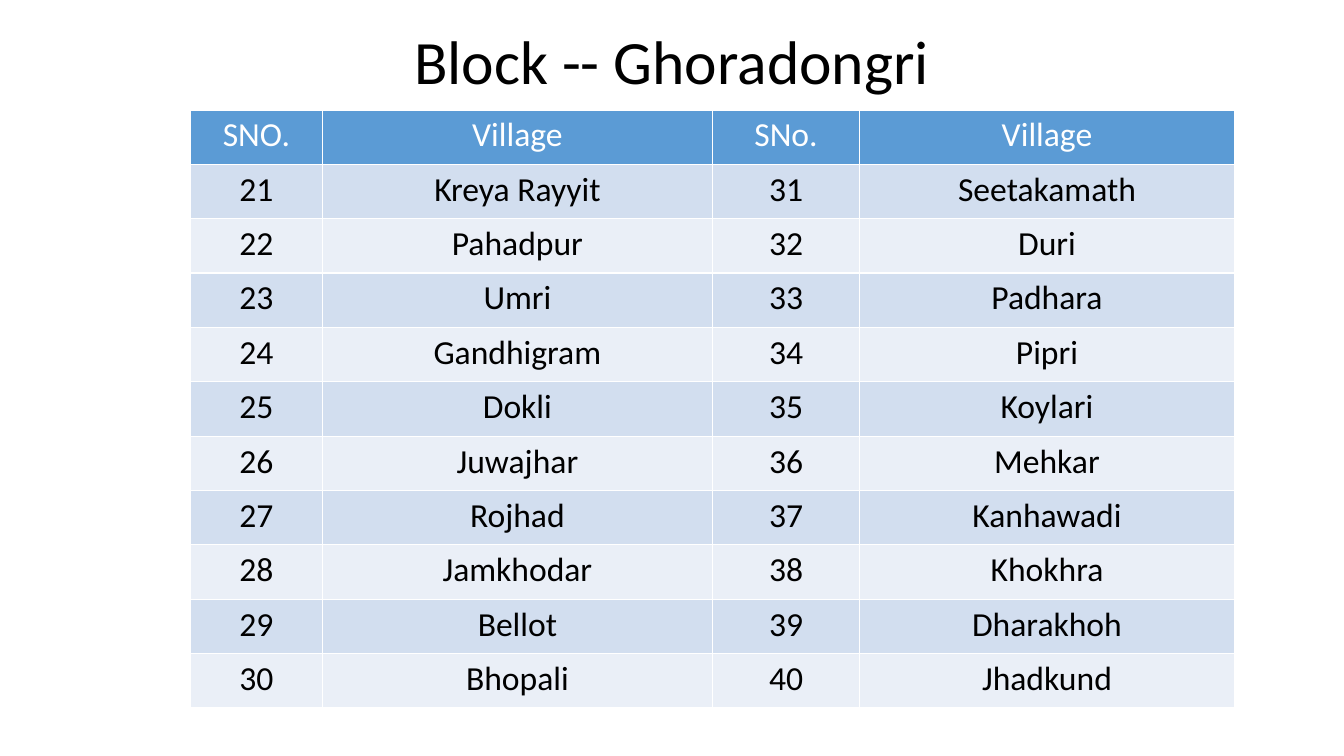
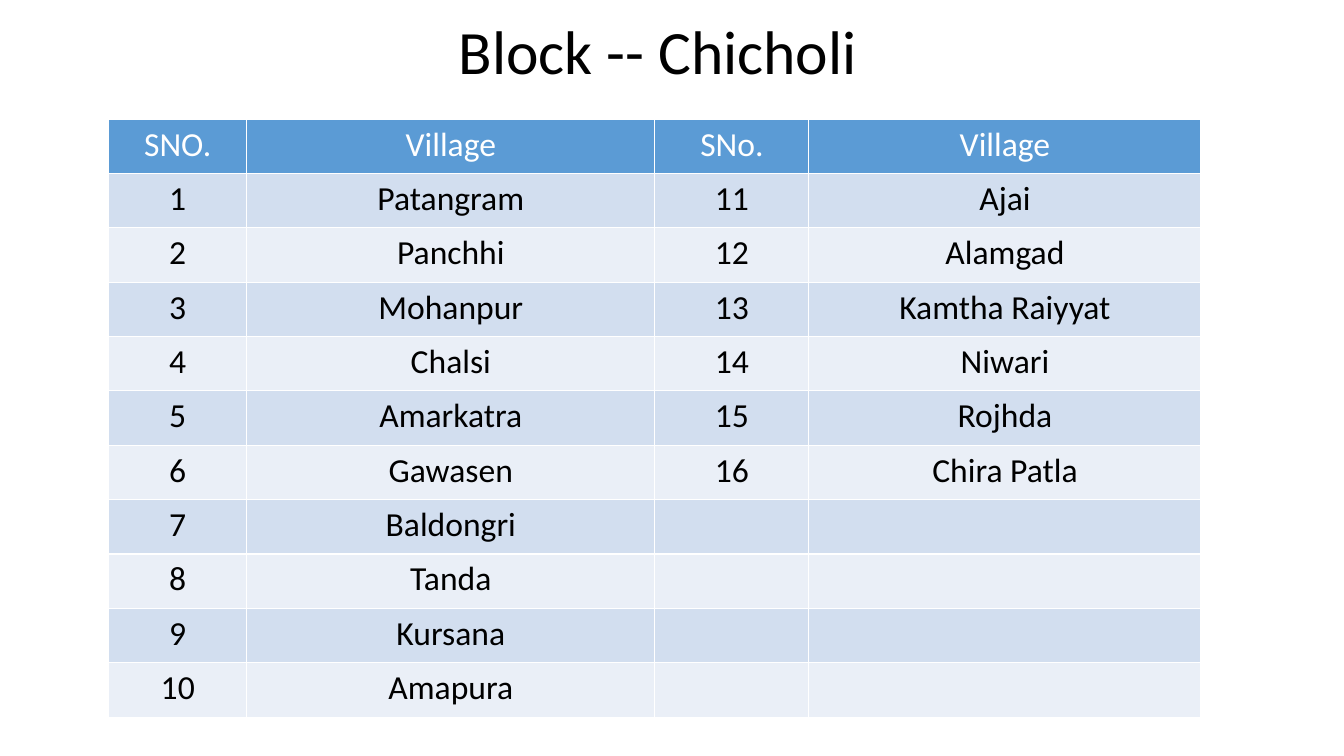
from itertools import zip_longest

from pptx import Presentation
from pptx.dml.color import RGBColor
from pptx.enum.text import MSO_ANCHOR, MSO_AUTO_SIZE, PP_ALIGN
from pptx.util import Cm, Pt

BLACK = RGBColor(0x00, 0x00, 0x00)
WHITE = RGBColor(0xFF, 0xFF, 0xFF)
HEADER_BLUE = RGBColor(0x5B, 0x9B, 0xD5)
BANDS = [RGBColor(0xEA, 0xEF, 0xF7), RGBColor(0xD2, 0xDE, 0xEF)]

FONT = "Calibri"
HEADINGS = ["SNO.", "Village", "SNo.", "Village"]
COL_PERCENT = [12.64, 37.36, 14.1, 35.9]
ROWS_PER_COLUMN = 10
ROW_HEIGHT = 1.37

# Title and table boxes are left, top, width and (title only) height in cm.
BLOCKS = [
    {
        "name": "Ghoradongri",
        "title_box": (0, 0, 33.87, 2.59),
        "table_box": (4.8, 2.77, 26.31),
        "first": 21,
        "villages": [
            "Kreya Rayyit", "Pahadpur", "Umri", "Gandhigram", "Dokli",
            "Juwajhar", "Rojhad", "Jamkhodar", "Bellot", "Bhopali",
            "Seetakamath", "Duri", "Padhara", "Pipri", "Koylari",
            "Mehkar", "Kanhawadi", "Khokhra", "Dharakhoh", "Jhadkund",
        ],
    },
    {
        "name": "Chicholi",
        "title_box": (0, 0.46, 33.17, 1.88),
        "table_box": (2.74, 3, 27.53),
        "first": 1,
        "villages": [
            "Patangram", "Panchhi", "Mohanpur", "Chalsi", "Amarkatra",
            "Gawasen", "Baldongri", "Tanda", "Kursana", "Amapura",
            "Ajai", "Alamgad", "Kamtha Raiyyat", "Niwari", "Rojhda",
            "Chira Patla",
        ],
    },
]


def write(tf, text, size=24, color=BLACK, line_spacing=None):
    p = tf.paragraphs[0]
    p.alignment = PP_ALIGN.CENTER
    p.line_spacing = line_spacing
    r = p.add_run()
    r.text = text
    r.font.name = FONT
    r.font.size = Pt(size)
    r.font.bold = False
    r.font.color.rgb = color


prs = Presentation()
prs.slide_width, prs.slide_height = Cm(33.87), Cm(19.05)
title_only = prs.slide_layouts[5]

for block in BLOCKS:
    s = prs.slides.add_slide(title_only)

    title = s.shapes.title
    title.left, title.top, title.width, title.height = map(Cm, block["title_box"])
    tf = title.text_frame
    tf.auto_size = MSO_AUTO_SIZE.NONE
    tf.vertical_anchor = MSO_ANCHOR.BOTTOM
    write(tf, f"Block -- {block['name']}", size=44, line_spacing=0.9)

    numbered = [(str(n), village)
                for n, village in enumerate(block["villages"], block["first"])]
    pairs = zip_longest(numbered[:ROWS_PER_COLUMN], numbered[ROWS_PER_COLUMN:],
                        fillvalue=("", ""))
    rows = [HEADINGS] + [left + right for left, right in pairs]

    # The default table style draws the white grid lines.
    left, top, width = block["table_box"]
    table = s.shapes.add_table(len(rows), len(HEADINGS), Cm(left), Cm(top),
                               Cm(width), Cm(ROW_HEIGHT * len(rows))).table
    for column, percent in zip(table.columns, COL_PERCENT):
        column.width = Cm(width * percent / 100)

    for i, row in enumerate(rows):
        table.rows[i].height = Cm(ROW_HEIGHT)
        for j, text in enumerate(row):
            cell = table.cell(i, j)
            cell.fill.solid()
            cell.fill.fore_color.rgb = BANDS[i % 2] if i else HEADER_BLUE
            if text:
                write(cell.text_frame, text, color=BLACK if i else WHITE)

prs.save("out.pptx")
